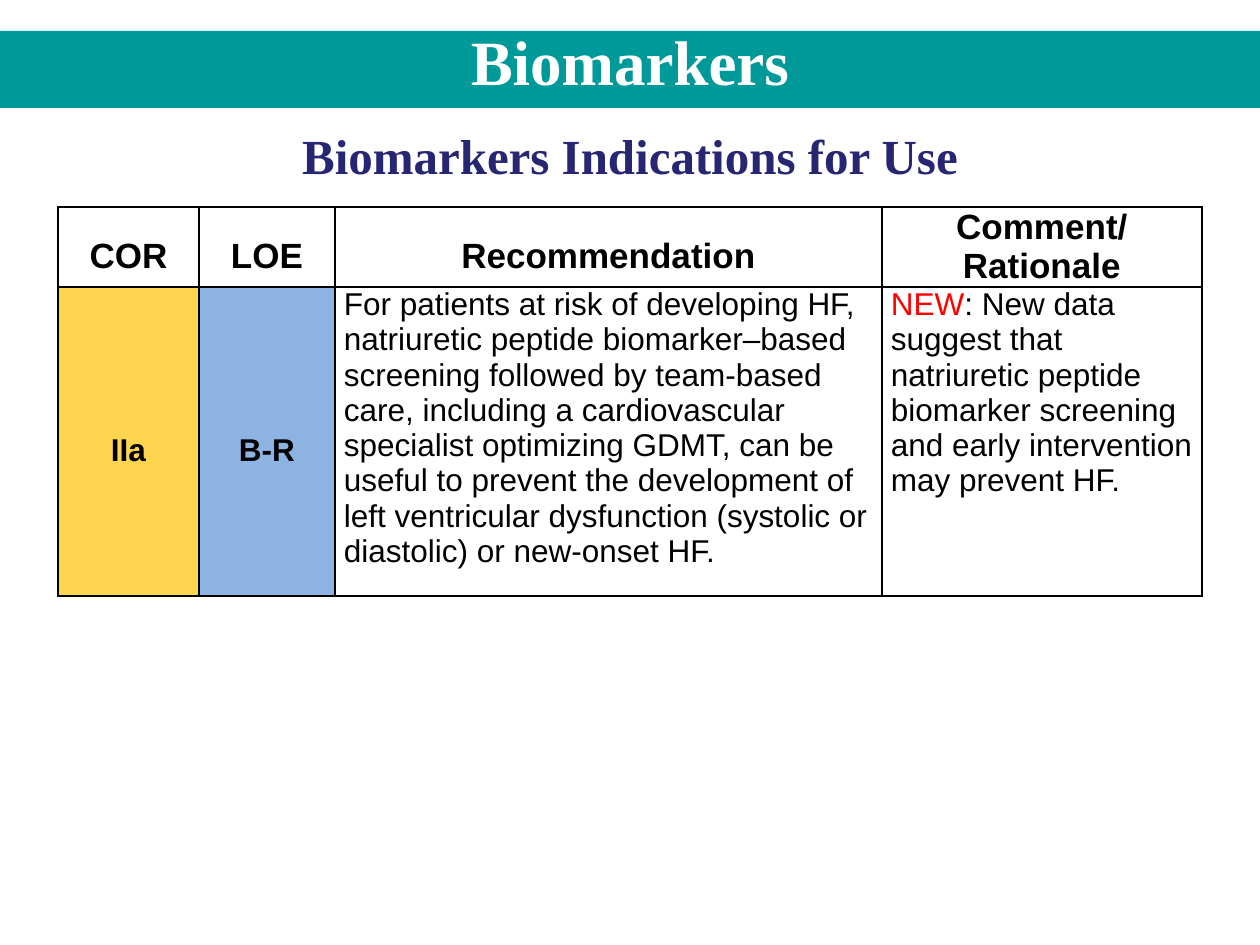
from dataclasses import dataclass

from lxml import etree
from pptx import Presentation
from pptx import util as u
from pptx.dml.color import RGBColor
from pptx.enum import shapes, text
from pptx.oxml.ns import qn

EMU_PER_PX = 914400 / 126
COLORS = {
    "black": "000000", "white": "FFFFFF", "red": "FF0000", "teal": "009999",
    "navy": "262673", "gold": "FFD44F", "blue": "8DB3E2",
}
ANCHOR = text.MSO_ANCHOR
ALIGN = text.PP_ALIGN


@dataclass
class Run:
    words: str
    size: int
    color: str = "black"
    bold: bool = False
    font: str = "Arial"


@dataclass
class Band:
    top: int
    height: int
    fill: str
    run: Run
    anchor: ANCHOR
    spacing: float = 1.0


@dataclass
class Cell:
    paragraphs: list[list[Run]]
    fill: str | None = None
    align: ALIGN = ALIGN.CENTER
    anchor: ANCHOR = ANCHOR.MIDDLE
    spacing: float = 1.5


def px(n: float) -> u.Emu:
    return u.Emu(round(n * EMU_PER_PX))


def rgb(name: str) -> RGBColor:
    return RGBColor.from_string(COLORS[name])


def write(tf, paragraphs: list[list[Run]], align: ALIGN, spacing: float) -> None:
    for i, runs in enumerate(paragraphs):
        p = tf.add_paragraph() if i else tf.paragraphs[0]
        p.alignment, p.line_spacing = align, spacing
        for run in runs:
            r = p.add_run()
            r.text = run.words
            form = {"name": run.font, "size": u.Pt(run.size), "bold": run.bold}
            for key, value in form.items():
                setattr(r.font, key, value)
            r.font.color.rgb = rgb(run.color)


def add_band(s, band: Band) -> None:
    sp = s.shapes.add_shape(shapes.MSO_SHAPE.RECTANGLE, 0, px(band.top),
                            px(1260), px(band.height))
    sp.shadow.inherit = False
    sp.fill.solid()
    sp.fill.fore_color.rgb = rgb(band.fill)
    sp.line.fill.background()
    tf = sp.text_frame
    tf.word_wrap, tf.vertical_anchor = True, band.anchor
    write(tf, [[band.run]], ALIGN.CENTER, band.spacing)


def add_borders(cell) -> None:
    tc_pr = cell._tc.get_or_add_tcPr()
    for i, side in enumerate(("lnL", "lnR", "lnT", "lnB")):
        ln = etree.Element(qn(f"a:{side}"), w=str(u.Pt(1)))
        fill = etree.SubElement(ln, qn("a:solidFill"))
        etree.SubElement(fill, qn("a:srgbClr"), val=COLORS["black"])
        tc_pr.insert(i, ln)


def fill_cell(cell, data: Cell) -> None:
    margins = {"margin_left": px(9), "margin_right": px(9),
               "margin_top": 0, "margin_bottom": 0}
    for key, value in margins.items():
        setattr(cell, key, value)
    cell.vertical_anchor = data.anchor
    if data.fill:
        cell.fill.solid()
        cell.fill.fore_color.rgb = rgb(data.fill)
    else:
        cell.fill.background()
    write(cell.text_frame, data.paragraphs, data.align, data.spacing)
    add_borders(cell)


def add_grid(s, left: int, top: int, cols: list[int], rows: list[int],
             cells: list[list[Cell]]) -> None:
    table = s.shapes.add_table(len(rows), len(cols), px(left), px(top),
                               px(sum(cols)), px(sum(rows))).table
    table.first_row = table.horz_banding = False
    for col, width in zip(table.columns, cols):
        col.width = px(width)
    for row, height, line in zip(table.rows, rows, cells):
        row.height = px(height)
        for cell, data in zip(row.cells, line):
            fill_cell(cell, data)


def header(*lines: str, spacing: float = 1.5) -> Cell:
    return Cell([[Run(line, 20, bold=True)] for line in lines], spacing=spacing)


def grade(words: str, fill: str) -> Cell:
    return Cell([[Run(words, 18, bold=True)]], fill)


def body(*runs: Run) -> Cell:
    return Cell([list(runs)], None, ALIGN.LEFT, ANCHOR.TOP, 1.0)


CELLS = [
    [header("COR"), header("LOE"), header("Recommendation"),
     header("Comment/", "Rationale", spacing=1.0)],
    [grade("IIa", "gold"), grade("B-R", "blue"),
     body(Run("For patients at risk of developing HF, natriuretic peptide "
              "biomarker–based screening followed by team-based care, "
              "including a cardiovascular specialist optimizing GDMT, can be "
              "useful to prevent the development of left ventricular "
              "dysfunction (systolic or diastolic) or new-onset HF.", 18)),
     body(Run("NEW", 18, "red"),
          Run(": New data suggest that natriuretic peptide biomarker "
              "screening and early intervention may prevent HF.", 18))],
]
BANDS = [
    Band(31, 77, "teal", Run("Biomarkers", 36, "white", True, "Times New Roman"),
         ANCHOR.TOP, 0.8),
    Band(111, 88, "white", Run("Biomarkers Indications for Use", 28, "navy",
                               True, "Times New Roman"), ANCHOR.MIDDLE),
]


def main() -> None:
    prs = Presentation()
    prs.slide_width, prs.slide_height = px(1260), px(945)
    s = prs.slides.add_slide(prs.slide_layouts[6])

    # Recommendation table
    add_grid(s, 58, 207, [141, 136, 547, 320], [80, 309], CELLS)

    # Section banner and slide title
    for band in BANDS:
        add_band(s, band)

    prs.save("out.pptx")


if __name__ == "__main__":
    main()
